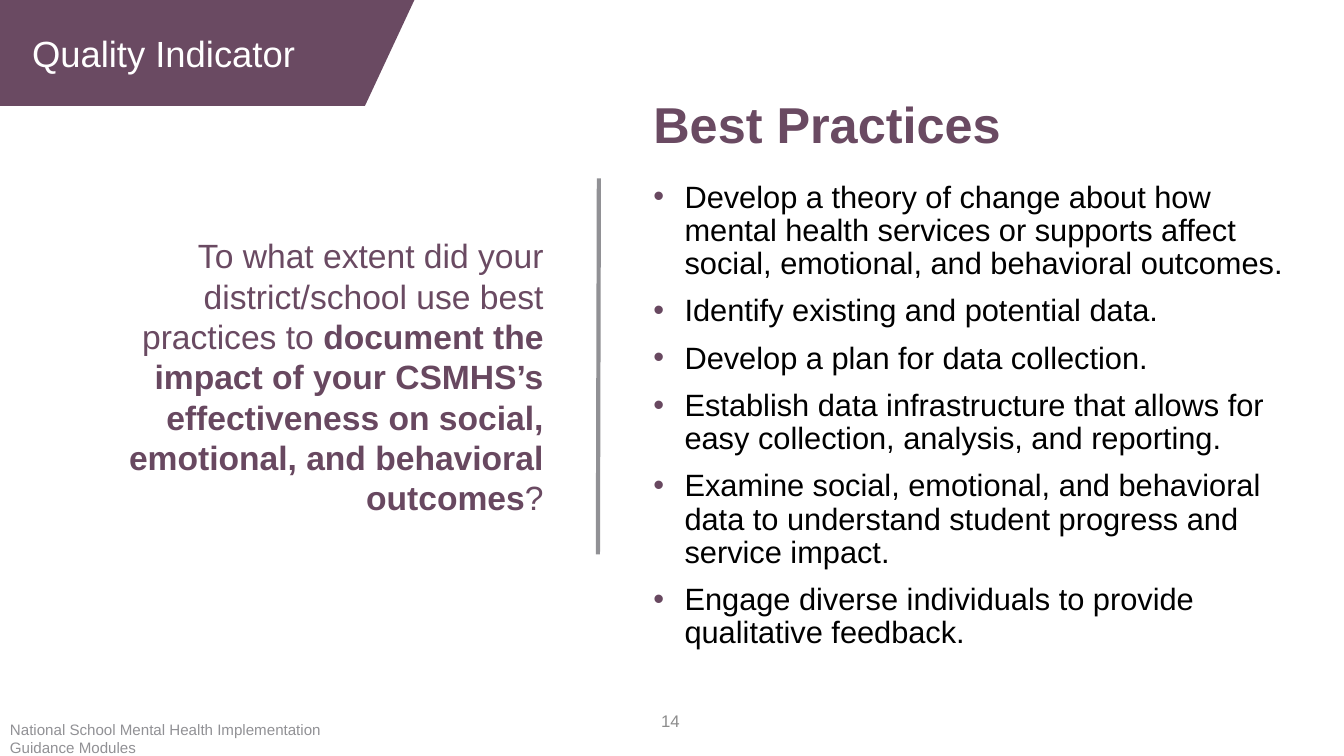
import pptx
import pptx.dml.color
import pptx.enum.shapes
import pptx.enum.text
import pptx.oxml
import pptx.oxml.ns
import pptx.util
from lxml import etree

Inches, Pt = pptx.util.Inches, pptx.util.Pt
ALIGN = pptx.enum.text.PP_ALIGN
ANCHOR = pptx.enum.text.MSO_ANCHOR
FIT = pptx.enum.text.MSO_AUTO_SIZE

# Content
PLUM, DARK_PLUM, GREY, NUMBER_GREY = "6A4A62", "684860", "919195", "8C8C8C"
BLACK, WHITE = "000000", "FFFFFF"
BANNER = "Quality Indicator"
HEADING = "Best Practices"
QUESTION = [
    ("To what extent did your district/school use best practices to ", PLUM, False),
    ("document the impact of your CSMHS’s effectiveness on social, emotional, "
     "and behavioral outcomes", DARK_PLUM, True),
    ("?", PLUM, False),
]
PRACTICES = [
    "Develop a theory of change about how mental health services or supports "
    "affect social, emotional, and behavioral outcomes.",
    "Identify existing and potential data.",
    "Develop a plan for data collection.",
    "Establish data infrastructure that allows for easy collection, analysis, "
    "and reporting.",
    "Examine social, emotional, and behavioral data to understand student "
    "progress and service impact.",
    "Engage diverse individuals to provide qualitative feedback.",
]
FOOTER = "National School Mental Health Implementation Guidance Modules"
PAGE_NUMBER = "14"
BANNER_CORNERS = [(0, 0), (4.11, 0), (3.62, 1.05), (0, 1.05)]
BULLET_INDENT = Inches(0.31)


def colour(value):
    return pptx.dml.color.RGBColor.from_string(value)


def set_all(target, values):
    for name, value in values.items():
        setattr(target, name, value)


def place(shape, left, top, width, height):
    set_all(shape, {"left": Inches(left), "top": Inches(top),
                    "width": Inches(width), "height": Inches(height)})


def fill_plain(shape, value):
    shape.shadow.inherit = False
    shape.fill.solid()
    shape.fill.fore_color.rgb = colour(value)
    shape.line.fill.background()


def write(shape, paragraphs, size, align=ALIGN.LEFT, anchor=ANCHOR.TOP,
          fit=FIT.NONE):
    """Each paragraph is a list of (text, colour, bold) spans."""
    frame = shape.text_frame
    set_all(frame, {"word_wrap": True, "auto_size": fit, "vertical_anchor": anchor})
    for index, spans in enumerate(paragraphs):
        para = frame.add_paragraph() if index else frame.paragraphs[0]
        set_all(para, {"alignment": align, "space_before": Pt(0)})
        for text, value, bold in spans:
            span = para.add_run()
            span.text = text
            set_all(span.font, {"name": "Arial", "size": Pt(size), "bold": bold})
            span.font.color.rgb = colour(value)


def add_bullet(para, value):
    properties = para._p.get_or_add_pPr()
    properties.set("marL", str(BULLET_INDENT))
    properties.set("indent", str(-BULLET_INDENT))
    tag = pptx.oxml.ns.qn
    bullet_colour = etree.SubElement(properties, tag("a:buClr"))
    etree.SubElement(bullet_colour, tag("a:srgbClr")).set("val", value)
    etree.SubElement(properties, tag("a:buFont")).set("typeface", "Arial")
    etree.SubElement(properties, tag("a:buChar")).set("char", "•")


deck = pptx.Presentation()
set_all(deck, {"slide_width": Inches(13.33), "slide_height": Inches(7.5)})
page = deck.slides.add_slide(deck.slide_layouts[1])
shapes = page.shapes


def add_text(box, *args, **options):
    write(shapes.add_textbox(*map(Inches, box)), *args, **options)


# Banner with slanted edge and its label
corners = [(Inches(x), Inches(y)) for x, y in BANNER_CORNERS]
outline = shapes.build_freeform(*corners[0])
outline.add_line_segments(corners[1:], close=True)
fill_plain(outline.convert_to_shape(), PLUM)
label = shapes.add_shape(pptx.enum.shapes.MSO_SHAPE.RECTANGLE,
                         *map(Inches, (0.22, 0.26, 2.9, 0.54)))
fill_plain(label, PLUM)
write(label, [[(BANNER, WHITE, False)]], 26, fit=FIT.SHAPE_TO_FIT_TEXT)

# Question on the left
add_text((0.62, 1.97, 4.87, 3.53), [QUESTION], 24, ALIGN.RIGHT, ANCHOR.MIDDLE)

# Heading and list on the right
heading = shapes.title
place(heading, 6.38, 0.87, 3.78, 0.71)
write(heading, [[(HEADING, PLUM, True)]], 36, fit=FIT.SHAPE_TO_FIT_TEXT)
practices = page.placeholders[1]
place(practices, 6.38, 1.75, 6.58, 4.8)
write(practices, [[(text, BLACK, False)] for text in PRACTICES], 22,
      fit=FIT.SHAPE_TO_FIT_TEXT)
for index, para in enumerate(practices.text_frame.paragraphs):
    set_all(para, {"line_spacing": 0.9, "space_before": Pt(10 if index else 0)})
    add_bullet(para, DARK_PLUM)

# Divider
divider = shapes.add_connector(pptx.enum.shapes.MSO_CONNECTOR.STRAIGHT,
                               *map(Inches, (5.94, 1.77, 5.93, 5.5)))
divider.line.color.rgb = colour(GREY)
divider.line.width = Pt(3)
etree.SubElement(divider._element.spPr, pptx.oxml.ns.qn("a:effectLst"))

# Footer and page number
add_text((0, 7.1, 3.81, 0.4), [[(FOOTER, GREY, False)]], 10.8)
add_text((3.84, 6.95, 3, 0.4), [[(PAGE_NUMBER, NUMBER_GREY, False)]], 12,
         ALIGN.RIGHT, ANCHOR.MIDDLE)

deck.save("out.pptx")
